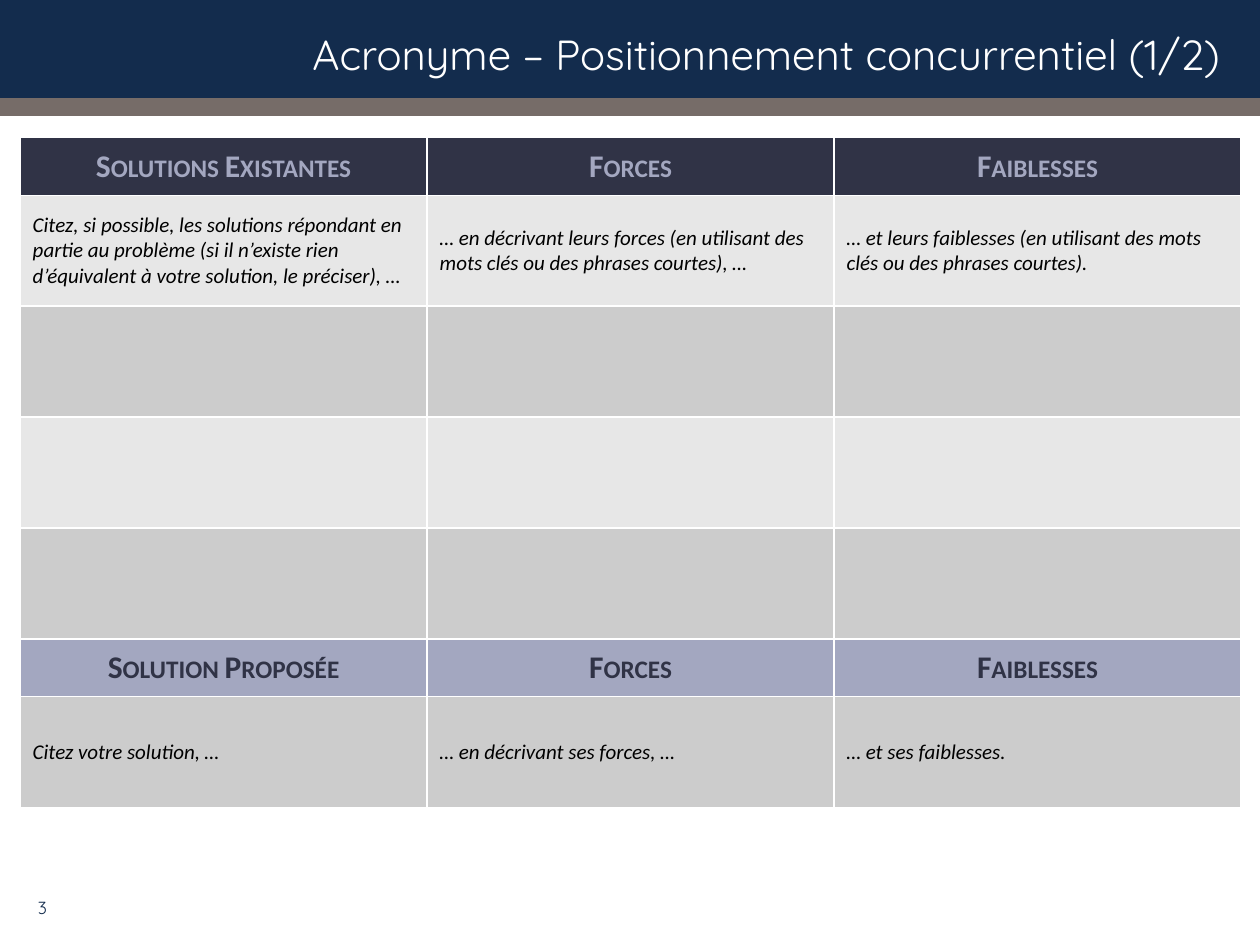
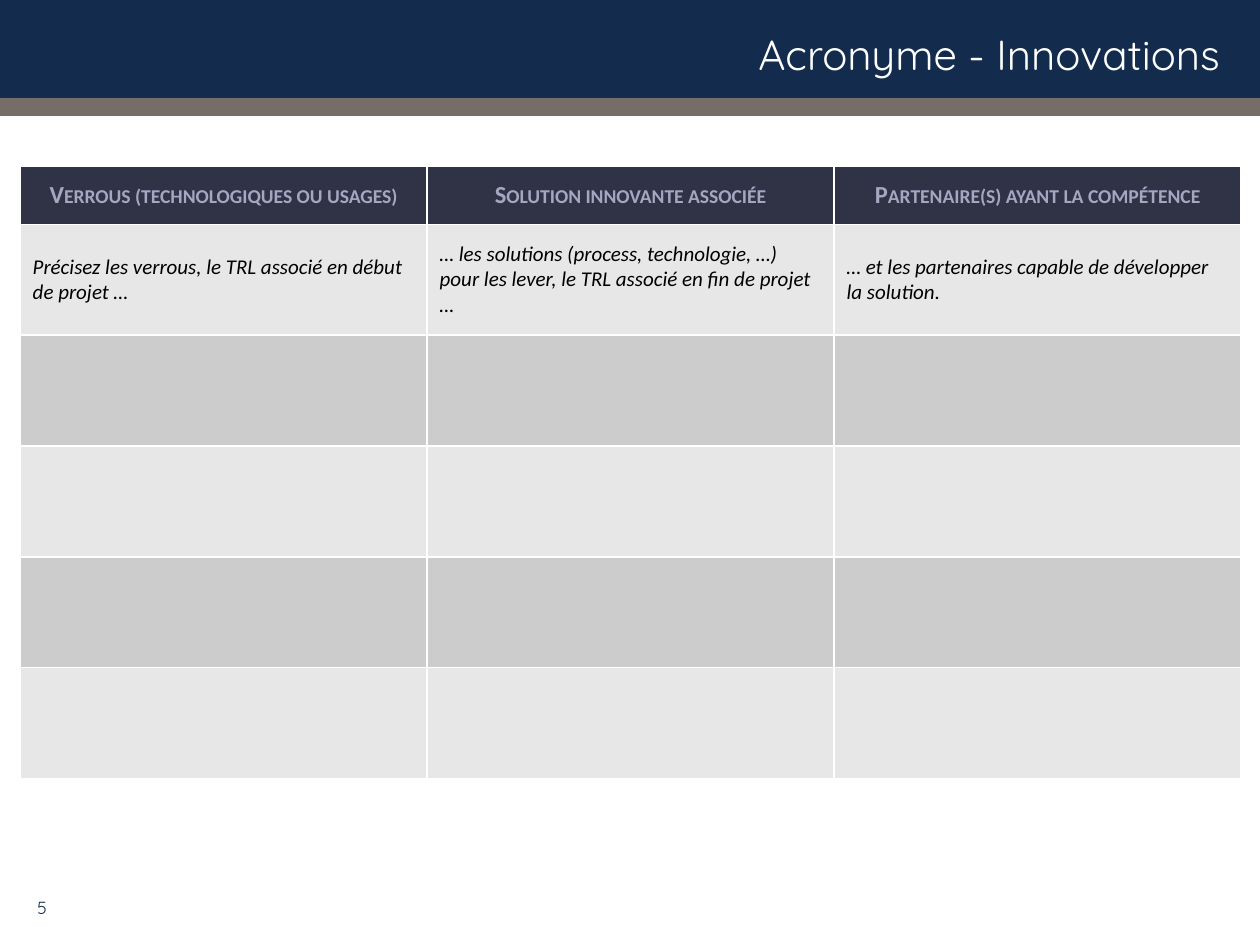
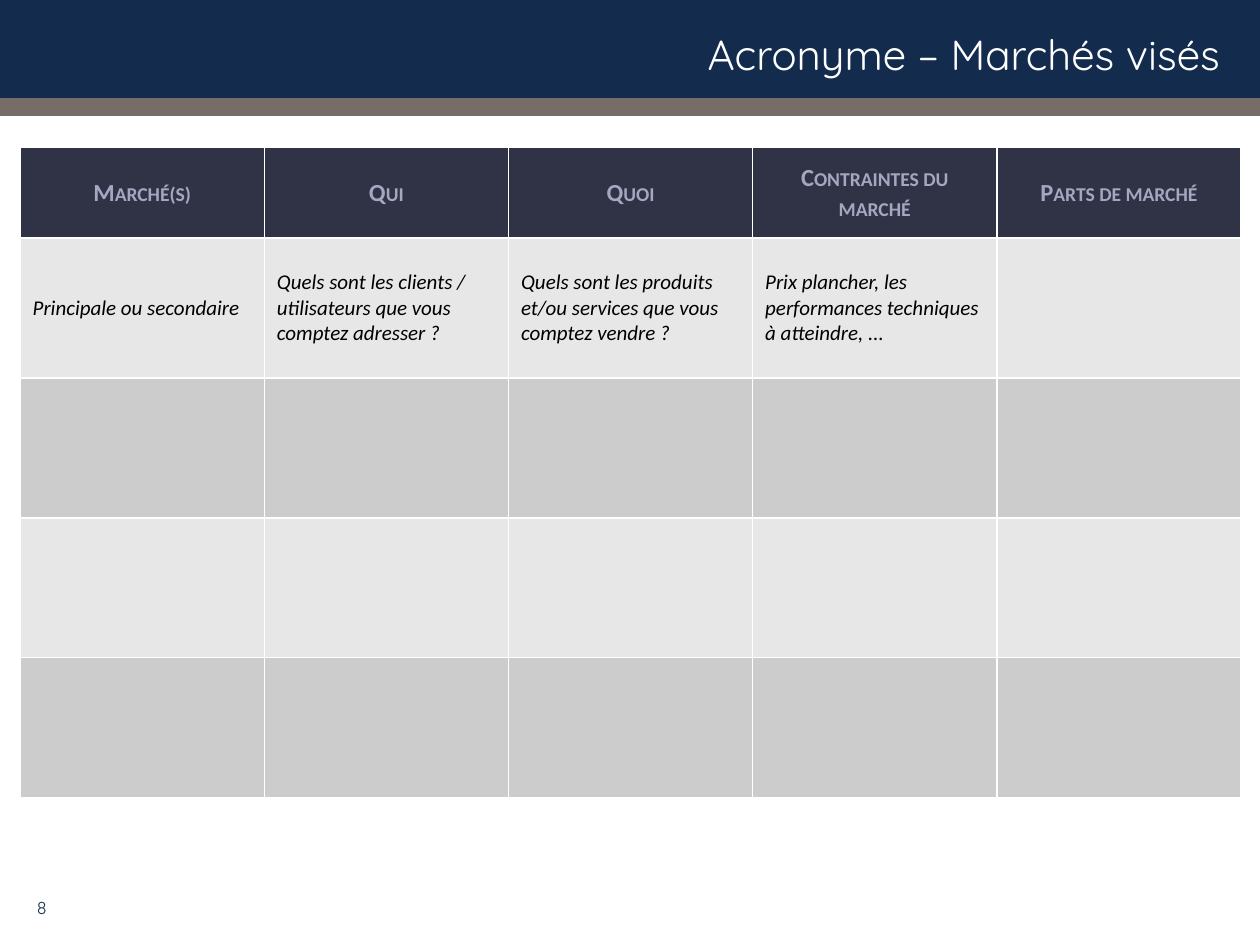
from lxml.etree import SubElement
from pptx import Presentation
from pptx.dml.color import RGBColor
from pptx.enum.shapes import MSO_SHAPE
from pptx.enum.text import MSO_ANCHOR, MSO_AUTO_SIZE, PP_ALIGN
from pptx.oxml.ns import qn
from pptx.util import Inches, Pt

NAVY = RGBColor(0x13, 0x2C, 0x4D)
TAUPE = RGBColor(0x76, 0x6C, 0x68)
WHITE = RGBColor(0xFF, 0xFF, 0xFF)
BLACK = RGBColor(0, 0, 0)
SLATE = RGBColor(0x30, 0x33, 0x46)
LAVENDER = RGBColor(0xA3, 0xA7, 0xC0)
LIGHT_GREY = RGBColor(0xE7, 0xE7, 0xE7)
MID_GREY = RGBColor(0xCC, 0xCC, 0xCC)
TITLE_FONT = "Quicksand"
TABLE_FONT = "Calibri"
TABLE_LEFT = 0.16
TABLE_WIDTH = 9.69

SLIDES = [
    {
        "title": "Acronyme – Positionnement concurrentiel (1/2)",
        "number": "3",
        "top": 1.09,
        "header_height": 0.46,
        "row_height": 0.88,
        "header_size": 18,
        "proposal_row": 5,
        "rows": [
            ["Solutions Existantes", "Forces", "Faiblesses"],
            [
                "Citez, si possible, les solutions répondant en partie au problème "
                "(si il n’existe rien d’équivalent à votre solution, le préciser), …",
                "… en décrivant leurs forces (en utilisant des mots clés ou des phrases courtes), …",
                "… et leurs faiblesses (en utilisant des mots clés ou des phrases courtes).",
            ],
            [], [], [],
            ["Solution Proposée", "Forces", "Faiblesses"],
            ["Citez votre solution, …", "… en décrivant ses forces, …", "… et ses faiblesses."],
        ],
    },
    {
        "title": "Acronyme - Innovations",
        "number": "5",
        "top": 1.32,
        "header_height": 0.46,
        "row_height": 0.88,
        "header_size": 14,
        "proposal_row": None,
        "rows": [
            [
                "Verrous (technologiques ou usages)",
                "Solution innovante associée",
                "Partenaire(s) ayant la compétence",
            ],
            [
                "Précisez les verrous, le TRL associé en début de projet …",
                "… les solutions (process, technologie, …) pour les lever, "
                "le TRL associé en fin de projet …",
                "… et les partenaires capable de développer la solution.",
            ],
            [], [], [], [],
        ],
    },
    {
        "title": "Acronyme – Marchés visés",
        "number": "8",
        "top": 1.17,
        "header_height": 0.72,
        "row_height": 1.11,
        "header_size": 14,
        "proposal_row": None,
        "rows": [
            ["Marché(s)", "Qui", "Quoi", "Contraintes du marché", "Parts de marché"],
            [
                "Principale ou secondaire",
                "Quels sont les clients / utilisateurs que vous comptez adresser ?",
                "Quels sont les produits et/ou services que vous comptez vendre ?",
                "Prix plancher, les performances techniques à atteindre, ...",
            ],
            [], [], [],
        ],
    },
]


def format_text(text_frame, font_name, size, color, alignment):
    paragraph = text_frame.paragraphs[0]
    paragraph.alignment = alignment
    for run in paragraph.runs:
        run.font.name = font_name
        run.font.size = Pt(size)
        run.font.color.rgb = color


def add_white_borders(cell):
    properties = cell._tc.get_or_add_tcPr()
    for side in ("a:lnL", "a:lnR", "a:lnT", "a:lnB"):
        line = SubElement(properties, qn(side), w=str(Pt(1)))
        fill = SubElement(line, qn("a:solidFill"))
        SubElement(fill, qn("a:srgbClr"), val=str(WHITE))


presentation = Presentation()
presentation.slide_width = Inches(10)
presentation.slide_height = Inches(7.5)
layout = presentation.slide_layouts[5]
slides = [presentation.slides.add_slide(layout) for content in SLIDES]

for top, height, color in ((0, 0.9, NAVY), (0.78, 0.14, TAUPE)):
    band = slides[0].shapes.add_shape(
        MSO_SHAPE.RECTANGLE, 0, Inches(top), Inches(10), Inches(height)
    )
    band.shadow.inherit = False
    band.fill.solid()
    band.fill.fore_color.rgb = color
    band.line.fill.background()
    layout.shapes.element.append(band.element)

for slide, content in zip(slides, SLIDES):
    title = slide.shapes.title
    title.left, title.top = Inches(0.15), Inches(0.14)
    title.width, title.height = Inches(9.63), Inches(0.58)
    title.text_frame.text = content["title"]
    title.text_frame.auto_size = MSO_AUTO_SIZE.NONE
    title.text_frame.vertical_anchor = MSO_ANCHOR.MIDDLE
    format_text(title.text_frame, TITLE_FONT, 24, WHITE, PP_ALIGN.RIGHT)

    number = slide.shapes.add_textbox(Inches(-0.04), Inches(7), Inches(0.51), Inches(0.4))
    number.text_frame.text = content["number"]
    number.text_frame.word_wrap = True
    number.text_frame.vertical_anchor = MSO_ANCHOR.MIDDLE
    format_text(number.text_frame, TITLE_FONT, 10, NAVY, PP_ALIGN.RIGHT)

    rows = content["rows"]
    column_count = len(rows[0])
    header_rows = (0, content["proposal_row"])
    heights = [
        content["header_height"] if index in header_rows else content["row_height"]
        for index in range(len(rows))
    ]
    table = slide.shapes.add_table(
        len(rows), column_count, Inches(TABLE_LEFT), Inches(content["top"]),
        Inches(TABLE_WIDTH), Inches(sum(heights)),
    ).table
    for column in table.columns:
        column.width = Inches(TABLE_WIDTH / column_count)

    for row_index, texts in enumerate(rows):
        table.rows[row_index].height = Inches(heights[row_index])
        is_header = row_index in header_rows
        if row_index == 0:
            fill_color, text_color = SLATE, LAVENDER
        elif is_header:
            fill_color, text_color = LAVENDER, SLATE
        else:
            fill_color = LIGHT_GREY if row_index % 2 else MID_GREY
            text_color = BLACK
        size = content["header_size"] if is_header else 12
        alignment = PP_ALIGN.CENTER if is_header else PP_ALIGN.LEFT

        for cell in table.rows[row_index].cells:
            add_white_borders(cell)
            cell.fill.solid()
            cell.fill.fore_color.rgb = fill_color
            cell.vertical_anchor = MSO_ANCHOR.MIDDLE

        for column_index, text in enumerate(texts):
            cell = table.cell(row_index, column_index)
            cell.text_frame.text = text
            format_text(cell.text_frame, TABLE_FONT, size, text_color, alignment)
            run = cell.text_frame.paragraphs[0].runs[0]
            run.font.bold = is_header
            run.font.italic = not is_header
            if is_header:
                run._r.get_or_add_rPr().set("cap", "small")

presentation.save("out.pptx")
